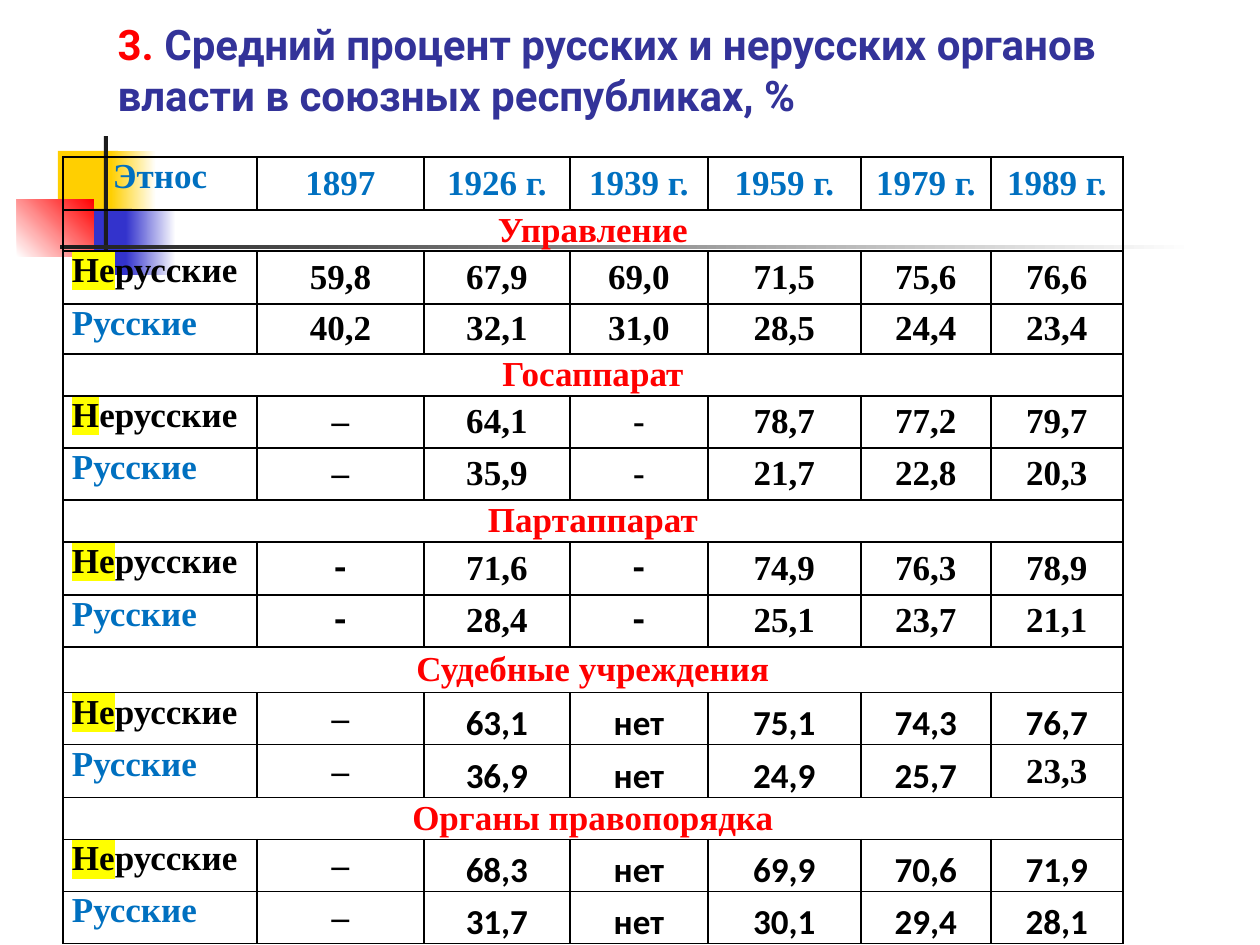
import dataclasses
import pptx
import pptx.dml.color
import pptx.enum.shapes
import pptx.enum.text
import pptx.oxml
import pptx.oxml.ns
import pptx.util

PX = 7257  # EMU in one px, 126 px to the inch
ALIGN = pptx.enum.text.PP_ALIGN
ANCHOR = pptx.enum.text.MSO_ANCHOR


@dataclasses.dataclass(frozen=True)
class Theme:
    title: str = "333399"
    accent: str = "FF0000"
    label: str = "0070C0"
    ink: str = "000000"
    mark: str = "FFFF00"
    gold: str = "FFCF01"
    blue: str = "3333CC"
    dark: str = "1C1C1C"
    white: str = "FFFFFF"
    sans: str = "Roboto"
    serif: str = "Times New Roman"
    plain: str = "Calibri"
    title_pt: int = 24
    cell_pt: int = 20


T = Theme()


@dataclasses.dataclass(frozen=True)
class Section:
    name: str
    heights: tuple
    marked: str
    non_russian: str
    russian: str
    hyphen_font: str = T.serif
    value_font: str = T.serif


YEARS = ["1897", "1926 г.", "1939 г.", "1959 г.", "1979 г.", "1989 г."]
COLS = [194, 167, 146, 138, 153, 130, 132]
HEADER_H = 53
SECTIONS = [
    Section("Управление", (41, 53, 50), "Не",
            "59,8 67,9 69,0 71,5 75,6 76,6", "40,2 32,1 31,0 28,5 24,4 23,4"),
    Section("Госаппарат", (42, 52, 52), "Н",
            "– 64,1 - 78,7 77,2 79,7", "– 35,9 - 21,7 22,8 20,3"),
    Section("Партаппарат", (42, 53, 52), "Не",
            "- 71,6 - 74,9 76,3 78,9", "- 28,4 - 25,1 23,7 21,1", hyphen_font=T.sans),
    Section("Судебные учреждения", (46, 52, 53), "Не",
            "– 63,1 нет 75,1 74,3 76,7", "– 36,9 нет 24,9 25,7 23,3", value_font=T.plain),
    Section("Органы правопорядка", (42, 52, 52), "Не",
            "– 68,3 нет 69,9 70,6 71,9", "– 31,7 нет 30,1 29,4 28,1", value_font=T.plain),
]
SERIF_VALUES = {"–", "23,3"}  # stay in the serif face in every section


def rgb(color):
    return pptx.dml.color.RGBColor.from_string(color)


def add_run(p, text, color, font, size):
    r = p.add_run()
    r.text = text
    r.font.name, r.font.size, r.font.bold = font, pptx.util.Pt(size), True
    r.font.color.rgb = rgb(color)
    return r


def highlight(r, color):
    fill = r.font._element.find(pptx.oxml.ns.qn("a:solidFill"))
    fill.addnext(pptx.oxml.parse_xml(
        f'<a:highlight {pptx.oxml.ns.nsdecls("a")}><a:srgbClr val="{color}"/></a:highlight>'))


def add_block(slide, x, y, w, h, start, end=None, angle=0):
    sp = slide.shapes.add_shape(pptx.enum.shapes.MSO_SHAPE.RECTANGLE,
                                x * PX, y * PX, w * PX, h * PX)
    sp.shadow.inherit = False
    sp.line.fill.background()
    if end is None:
        sp.fill.solid()
        sp.fill.fore_color.rgb = rgb(start)
        return
    sp.fill.gradient()
    sp.fill.gradient_angle = angle
    for stop, position, color in zip(sp.fill.gradient_stops, (0, 1), (start, end)):
        stop.position = position
        stop.color.rgb = rgb(color)


def add_ornament(slide, x, y):
    """Overlapping colour blocks with a crossing pair of bars."""
    add_block(slide, x + 41, y + 15, 60, 66, T.gold)
    add_block(slide, x + 94, y + 15, 45, 66, T.gold, T.white)
    add_block(slide, x + 57, y + 73, 58, 66, T.blue)
    add_block(slide, x + 109, y + 73, 50, 66, T.blue, T.white)
    add_block(slide, x, y + 63, 77, 58, T.white, T.accent, angle=45)
    add_block(slide, x + 87, y, 4, 145, T.dark)
    add_block(slide, x + 43, y + 109, 1134, 4, T.dark, T.white)


def fill_title(slide, x, y, w, h):
    sp = slide.shapes.title
    sp.left, sp.top, sp.width, sp.height = x * PX, y * PX, w * PX, h * PX
    tf = sp.text_frame
    tf.word_wrap = True
    tf.auto_size = pptx.enum.text.MSO_AUTO_SIZE.NONE
    tf.vertical_anchor = ANCHOR.BOTTOM
    p = tf.paragraphs[0]
    p.alignment = ALIGN.LEFT
    add_run(p, "3.", T.accent, T.sans, T.title_pt)
    add_run(p, " Средний процент русских и нерусских органов власти в союзных республиках, %",
            T.title, T.sans, T.title_pt)


def frame_cell(cell):
    """Clear the fill and draw thin lines on all four sides."""
    tc_pr = cell._tc.get_or_add_tcPr()
    for side in ("lnL", "lnR", "lnT", "lnB"):
        tc_pr.append(pptx.oxml.parse_xml(
            f'<a:{side} {pptx.oxml.ns.nsdecls("a")} w="12700"><a:solidFill>'
            f'<a:srgbClr val="{T.ink}"/></a:solidFill></a:{side}>'))
    cell.fill.background()


def write_cell(cell, text, color, font=T.serif, align=ALIGN.CENTER,
               anchor=ANCHOR.MIDDLE, marked=""):
    inset = 0 if anchor == ANCHOR.BOTTOM else 9 * PX
    cell.margin_left = cell.margin_right = inset
    cell.margin_top = cell.margin_bottom = 0
    cell.vertical_anchor = anchor
    p = cell.text_frame.paragraphs[0]
    p.alignment = align
    if marked:
        highlight(add_run(p, marked, color, font, T.cell_pt), T.mark)
    add_run(p, text, color, font, T.cell_pt)


def write_values(table, row, section, values):
    for col, value in enumerate(values.split(), start=1):
        if value == "-":
            font = section.hyphen_font
        else:
            font = T.serif if value in SERIF_VALUES else section.value_font
        anchor = ANCHOR.BOTTOM if font == T.plain else ANCHOR.MIDDLE
        write_cell(table.cell(row, col), value, T.ink, font, anchor=anchor)


def add_power_table(slide, x, y):
    heights = [HEADER_H] + [h for s in SECTIONS for h in s.heights]
    table = slide.shapes.add_table(len(heights), len(COLS), x * PX, y * PX,
                                   sum(COLS) * PX, sum(heights) * PX).table
    table.first_row = table.horz_banding = False
    for column, w in zip(table.columns, COLS):
        column.width = w * PX
    for row, h in zip(table.rows, heights):
        row.height = h * PX
    for cell in table.iter_cells():
        frame_cell(cell)

    # Header
    write_cell(table.cell(0, 0), "Этнос", T.label, anchor=ANCHOR.TOP)
    for col, year in enumerate(YEARS, start=1):
        write_cell(table.cell(0, col), year, T.label)

    # One heading and two data rows for each section
    for i, section in enumerate(SECTIONS):
        top = 1 + 3 * i
        heading = table.cell(top, 0)
        heading.merge(table.cell(top, len(COLS) - 1))
        write_cell(heading, section.name, T.accent)
        write_cell(table.cell(top + 1, 0), "Нерусские".removeprefix(section.marked), T.ink,
                   align=ALIGN.JUSTIFY, anchor=ANCHOR.TOP, marked=section.marked)
        write_cell(table.cell(top + 2, 0), "Русские", T.label,
                   align=ALIGN.JUSTIFY, anchor=ANCHOR.TOP)
        write_values(table, top + 1, section, section.non_russian)
        write_values(table, top + 2, section, section.russian)


def main():
    prs = pptx.Presentation()
    prs.slide_width, prs.slide_height = pptx.util.Inches(10), pptx.util.Inches(7.5)
    slide = prs.slides.add_slide(prs.slide_layouts[5])
    add_ornament(slide, 17, 136)
    fill_title(slide, 105, 21, 1018, 105)
    add_power_table(slide, 63, 157)
    prs.save("out.pptx")


if __name__ == "__main__":
    main()
